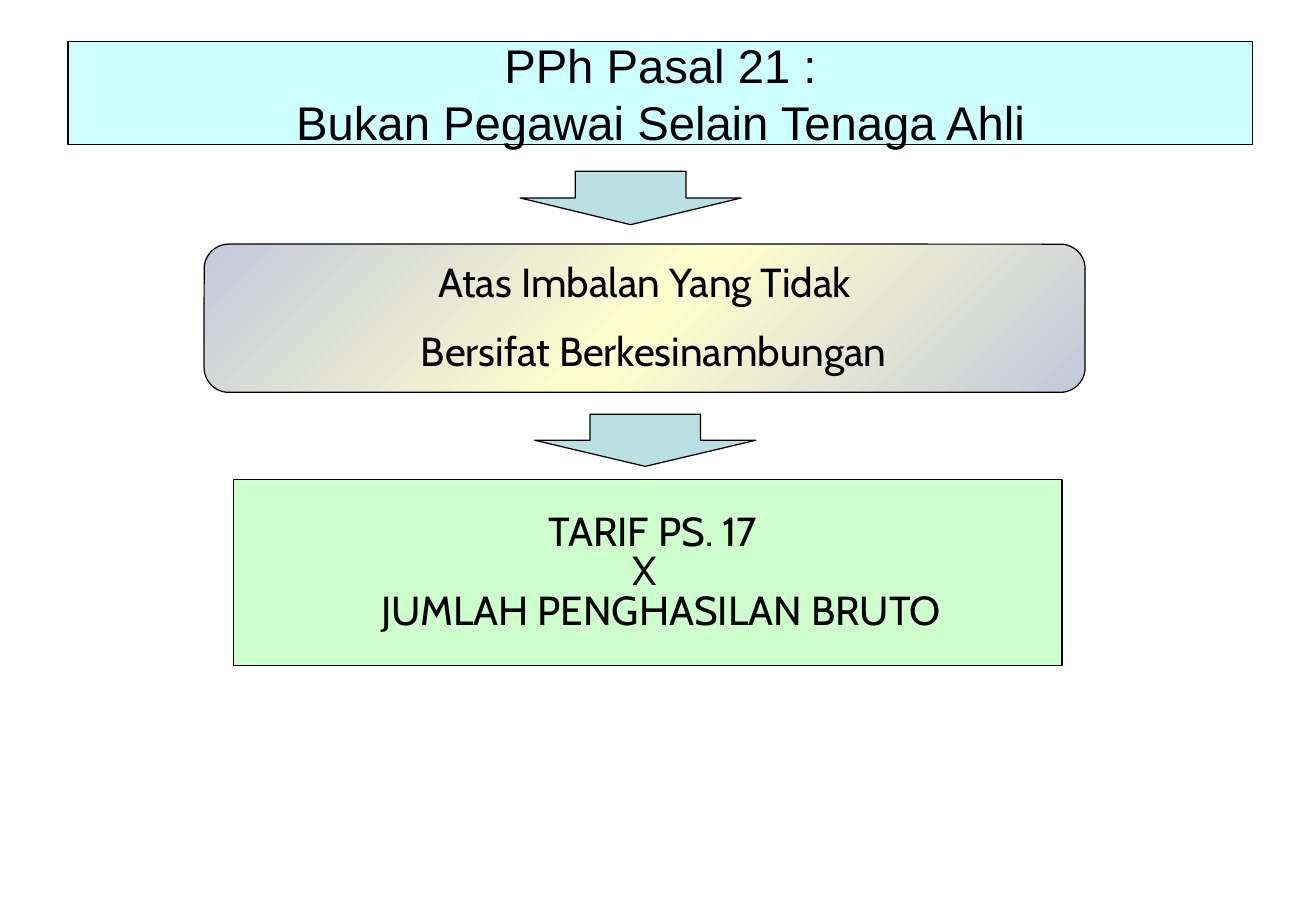
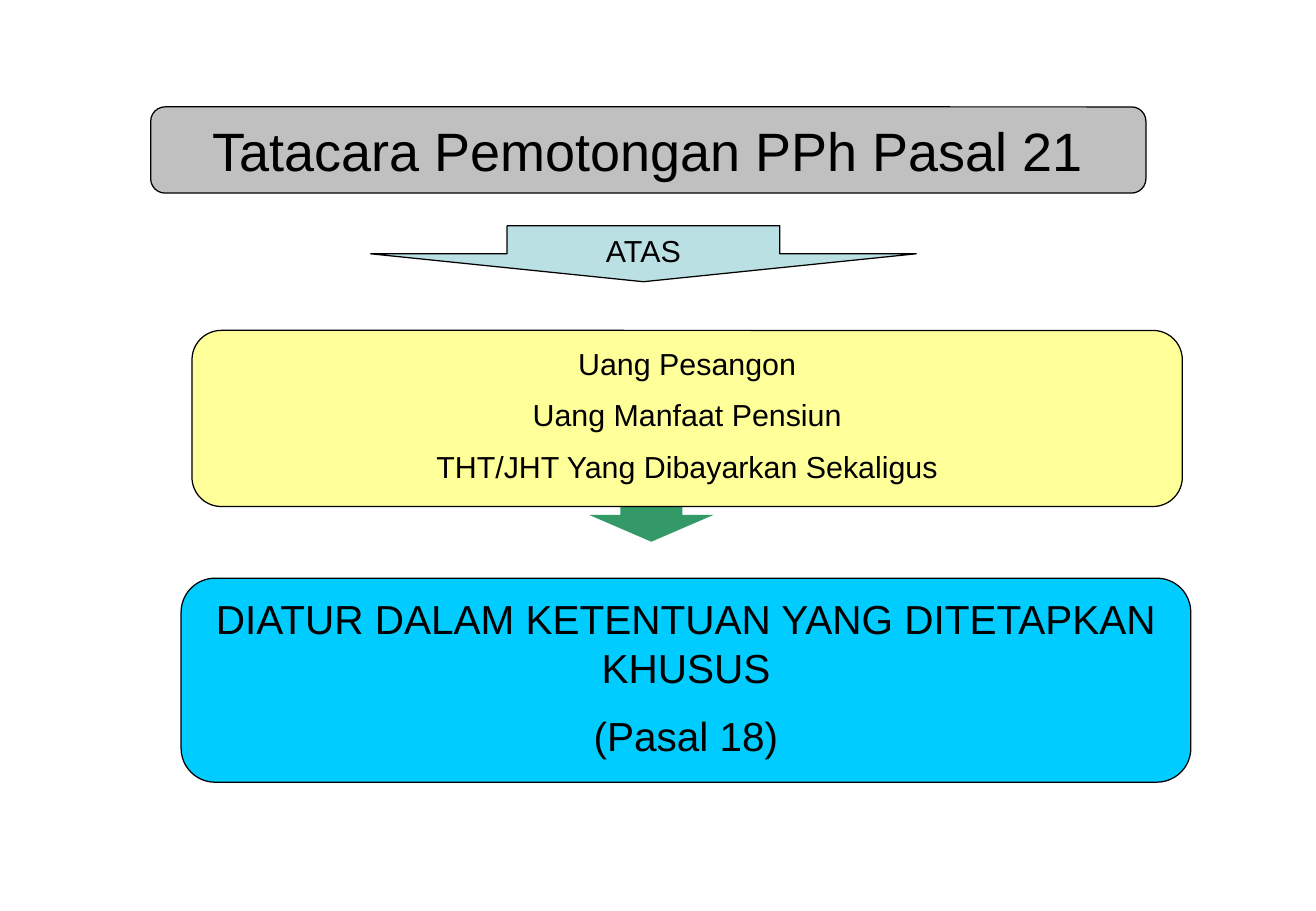
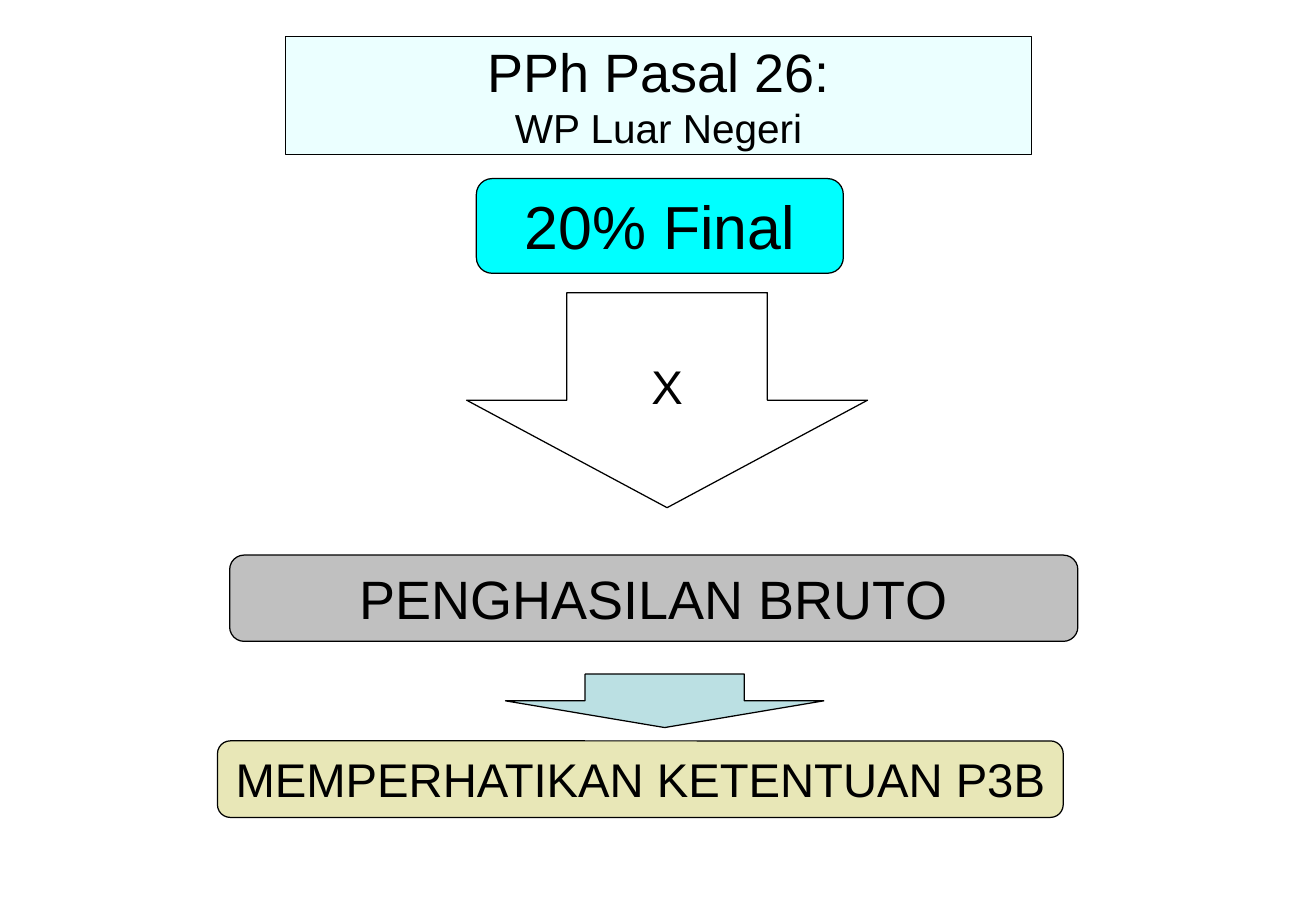
from copy import deepcopy

from lxml import etree
from pptx import Presentation
from pptx import util as u
from pptx.dml.color import RGBColor
from pptx.enum import shapes, text
from pptx.oxml.ns import qn

PX = 9144  # EMU in one px: 100 px to the inch
INK = "000000"
AQUA = "CCFFFF"
SILVER = "C0C0C0"
ARROW_TINT = "BBE0E3"
BODY_FONT, LABEL_FONT = "Arial", "Cabin"

RECT = shapes.MSO_SHAPE.RECTANGLE
ROUNDED = shapes.MSO_SHAPE.ROUNDED_RECTANGLE
DOWN_ARROW = shapes.MSO_SHAPE.DOWN_ARROW


def px(length):
    return u.Emu(length * PX)


def rgb(hex_colour):
    return RGBColor.from_string(hex_colour)


def write(shape, paragraphs, size, font=BODY_FONT, gap=0, anchor=text.MSO_ANCHOR.TOP, top=5):
    """Fill a shape with centred paragraphs, parted by gap points."""
    frame = shape.text_frame
    frame.word_wrap = True
    frame.auto_size = text.MSO_AUTO_SIZE.NONE
    frame.vertical_anchor = anchor
    frame.margin_left = frame.margin_right = px(10)
    frame.margin_top, frame.margin_bottom = px(top), px(5)
    for index, line in enumerate(paragraphs):
        paragraph = frame.paragraphs[0] if index == 0 else frame.add_paragraph()
        paragraph.alignment = text.PP_ALIGN.CENTER
        if index:
            paragraph.space_before = u.Pt(gap)
        add_run(paragraph, line, size, font)
    return frame


def add_run(paragraph, words, size, font=BODY_FONT):
    run = paragraph.add_run()
    run.text = words
    run.font.size = u.Pt(size)
    run.font.name = font
    run.font.color.rgb = rgb(INK)


def add_box(slide, kind, at, fill=None, outlined=True):
    box = slide.shapes.add_shape(kind, *map(px, at))
    box.shadow.inherit = False
    if fill:
        box.fill.solid()
        box.fill.fore_color.rgb = rgb(fill)
    else:
        box.fill.background()
    if outlined:
        box.line.color.rgb = rgb(INK)
        box.line.width = u.Pt(0.75)
    else:
        box.line.fill.background()
    return box


def add_title(slide, at, lines):
    """Add a title band; lines are (words, size) pairs in one paragraph."""
    title = add_box(slide, RECT, at, AQUA)
    (first, size), *rest = lines
    frame = write(title, [first], size, anchor=text.MSO_ANCHOR.MIDDLE)
    for words, size in rest:
        frame.paragraphs[0].add_line_break()
        add_run(frame.paragraphs[0], words, size)
    return title


def add_panel(slide, at, fill, paragraphs, size, **style):
    panel = add_box(slide, ROUNDED, at, fill)
    return panel, write(panel, paragraphs, size, **style)


def add_label(slide, at, words, size):
    label = slide.shapes.add_textbox(*map(px, at))
    write(label, [words], size, font=LABEL_FONT)


def set_transparent(shape, opacity):
    """Give a solid fill an opacity in percent."""
    colour = shape.fill._xPr.find(qn("a:solidFill"))[0]
    etree.SubElement(colour, qn("a:alpha")).set("val", str(opacity * 1000))


def set_diagonal_gradient(shape, edge, middle):
    """Blend edge to middle and back, from top left to bottom right."""
    shape.fill.gradient()
    shape.fill.gradient_angle = 315
    first, last = shape.fill.gradient_stops
    first.color.rgb, last.color.rgb = rgb(middle), rgb(edge)
    stops = shape._element.spPr.find(".//" + qn("a:gsLst"))
    centre = deepcopy(stops[0])
    centre.set("pos", "50000")
    stops.insert(1, centre)
    first.color.rgb = rgb(edge)


def build_non_employee(slide):
    add_box(slide, RECT, (192, 395, 682, 153), "CCFFCC")
    add_title(slide, (56, 34, 975, 85),
              [("PPh Pasal 21 :", 28), ("Bukan Pegawai Selain Tenaga Ahli", 28)])
    add_box(slide, DOWN_ARROW, (428, 141, 182, 44), ARROW_TINT)
    payment, payment_text = add_panel(
        slide, (168, 201, 725, 122), "FFFFCC",
        ["Atas Imbalan Yang Tidak", "Bersifat Berkesinambungan"],
        24, font=LABEL_FONT, gap=12)
    set_diagonal_gradient(payment, "C4C8DA", "FFFFCC")
    payment_text.paragraphs[1]._p.get_or_add_pPr().set("marL", str(px(15)))
    add_box(slide, DOWN_ARROW, (440, 341, 182, 43), ARROW_TINT)
    for left, top, width, words in [
        (361, 412, 353, "TARIF PS. 17"),
        (485, 444, 91, "X"),
        (271, 477, 546, "JUMLAH PENGHASILAN BRUTO"),
    ]:
        add_label(slide, (left, top, width, 50), words, 24)


def build_withholding(slide):
    add_panel(slide, (124, 88, 819, 71), SILVER, ["Tatacara Pemotongan PPh Pasal 21"], 32)
    add_box(slide, DOWN_ARROW, (485, 402, 102, 44), "339966", outlined=False)
    upon = add_box(slide, DOWN_ARROW, (305, 186, 449, 46), ARROW_TINT)
    write(upon, ["ATAS"], 18)
    add_panel(slide, (158, 272, 815, 145), "FFFF99",
              ["Uang Pesangon", "Uang Manfaat Pensiun", "THT/JHT Yang Dibayarkan Sekaligus"],
              18, gap=9)
    add_panel(slide, (149, 476, 831, 168), "00CCFF",
              ["DIATUR DALAM KETENTUAN YANG DITETAPKAN KHUSUS", "(Pasal 18)"], 24, gap=12)


def build_foreign_taxpayer(slide):
    title = add_title(slide, (235, 30, 614, 97), [("PPh Pasal 26:", 32), ("WP Luar Negeri", 24)])
    set_transparent(title, 38)
    add_panel(slide, (392, 147, 302, 78), "00FFFF", ["20% Final"], 36)
    times = add_box(slide, DOWN_ARROW, (384, 241, 330, 177))
    write(times, ["X"], 28, top=53)
    add_panel(slide, (189, 457, 698, 71), SILVER, ["PENGHASILAN BRUTO"], 32)
    add_box(slide, DOWN_ARROW, (416, 555, 262, 44), ARROW_TINT)
    add_panel(slide, (179, 610, 696, 63), "E8E7B7", ["MEMPERHATIKAN KETENTUAN P3B"], 28)


def main():
    deck = Presentation()
    deck.slide_width, deck.slide_height = px(1083), px(750)
    blank = deck.slide_layouts[6]
    for build in (build_non_employee, build_withholding, build_foreign_taxpayer):
        build(deck.slides.add_slide(blank))
    deck.save("out.pptx")


if __name__ == "__main__":
    main()
